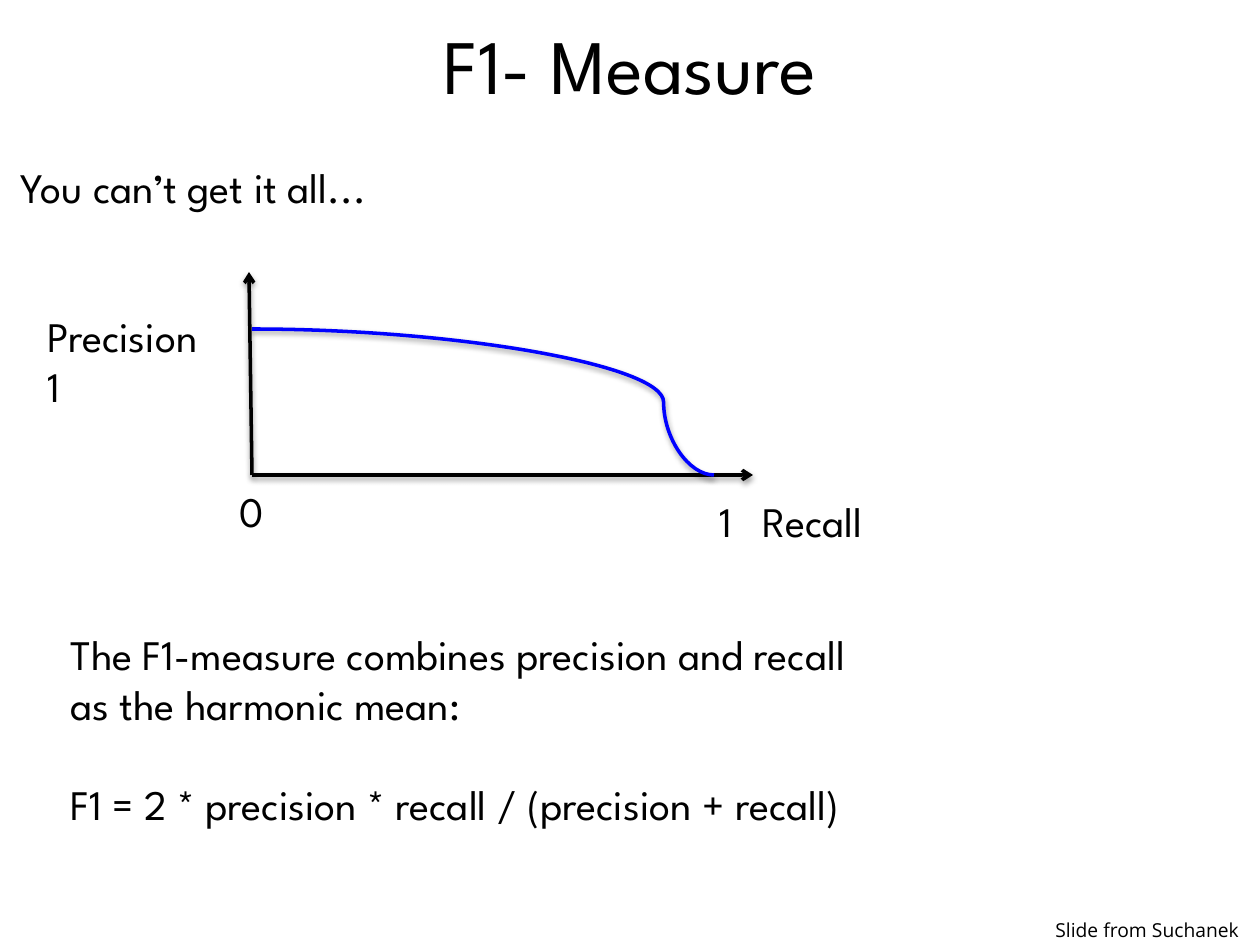
from dataclasses import dataclass

from lxml import etree
from pptx import Presentation
from pptx.dml.color import RGBColor
from pptx.enum.shapes import MSO_CONNECTOR
from pptx.enum.text import MSO_ANCHOR, PP_ALIGN
from pptx.oxml import parse_xml
from pptx.oxml.ns import nsdecls, qn
from pptx.util import Emu, Pt

STRAIGHT, CURVE = MSO_CONNECTOR.STRAIGHT, MSO_CONNECTOR.CURVE
LEFT, CENTER = PP_ALIGN.LEFT, PP_ALIGN.CENTER
TOP, MIDDLE = MSO_ANCHOR.TOP, MSO_ANCHOR.MIDDLE
SCALE = 914400 / 126


@dataclass(frozen=True)
class Theme:
    ink: RGBColor = RGBColor(0, 0, 0)
    curve: RGBColor = RGBColor(0, 1, 255)
    font: str = "League Spartan"
    credit_font: str = "Open Sans"
    title: int = 44
    body: int = 24
    credit: int = 11
    line: int = 2


THEME = Theme()


def px(length):
    return Emu(round(length * SCALE))


def add_text(text, bounds, size=THEME.body, font=THEME.font, align=LEFT, anchor=TOP):
    """Add a text box with one paragraph per line of text."""
    box = slide.shapes.add_textbox(*map(px, bounds))
    frame = box.text_frame
    frame.word_wrap = True
    frame.vertical_anchor = anchor
    frame.text = text
    for para in frame.paragraphs:
        para.alignment = align
        para.font.size = Pt(size)
        para.font.name = font
        para.font.color.rgb = THEME.ink
    return frame.paragraphs


deck = Presentation()
deck.slide_width, deck.slide_height = px(1260), px(945)
slide = deck.slides.add_slide(deck.slide_layouts[6])

add_text("F1- Measure", (0, 0, 1260, 127), size=THEME.title, align=CENTER, anchor=MIDDLE)
add_text("You can’t get it all...", (8, 155, 438, 63))

# Axes and the precision-recall curve
origin = (252, 475)
lines = [
    (STRAIGHT, origin, (249, 272), THEME.ink),
    (STRAIGHT, origin, (753, 475), THEME.ink),
    (CURVE, (252, 329), (714, 475), THEME.curve),
]
for kind, start, end, color in lines:
    connector = slide.shapes.add_connector(kind, *map(px, start + end))
    connector.line.color.rgb = color
    connector.line.width = Pt(THEME.line)
    properties = connector._element.spPr
    if kind == STRAIGHT:
        etree.SubElement(properties.find(qn("a:ln")), qn("a:tailEnd"), type="arrow")
    else:
        geometry = properties.find(qn("a:prstGeom"))
        adjustments = geometry.find(qn("a:avLst"))
        if adjustments is None:
            adjustments = etree.SubElement(geometry, qn("a:avLst"))
        etree.SubElement(adjustments, qn("a:gd"), name="adj1", fmla="val 89100")
    properties.append(parse_xml(
        f'<a:effectLst {nsdecls("a")}>'
        '<a:outerShdw blurRad="40000" dist="20000" dir="5400000" rotWithShape="0">'
        '<a:srgbClr val="000000"><a:alpha val="38000"/></a:srgbClr>'
        '</a:outerShdw></a:effectLst>'
    ))

add_text("Precision\v1", (35, 304, 215, 115))
add_text("0", (227, 479, 49, 63))
recall = add_text("1\tRecall", (707, 489, 210, 63))[0]
tab_stops = etree.SubElement(recall._p.get_or_add_pPr(), qn("a:tabLst"))
etree.SubElement(tab_stops, qn("a:tab"), pos=str(px(43)), algn="l")
# The schema wants tab stops ahead of the default run format
recall._p.pPr.insert(0, tab_stops)

definition = add_text(
    "The F1-measure combines precision and recall\n"
    "as the harmonic mean:\n"
    "F1 = 2 * precision * recall / (precision + recall)",
    (58, 622, 976, 217),
)
definition[-1].space_before = px(50)

add_text("Slide from Suchanek", (1043, 912, 217, 37), size=THEME.credit, font=THEME.credit_font)

deck.save("out.pptx")
